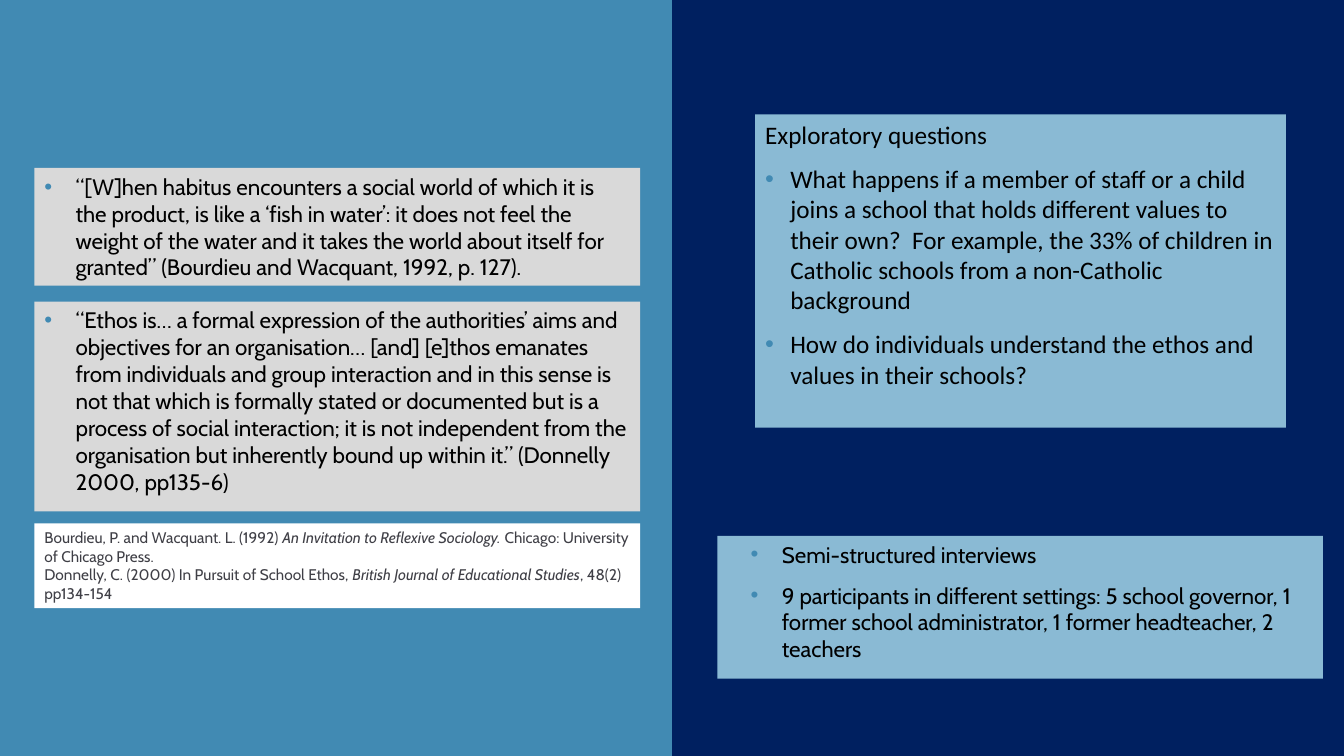
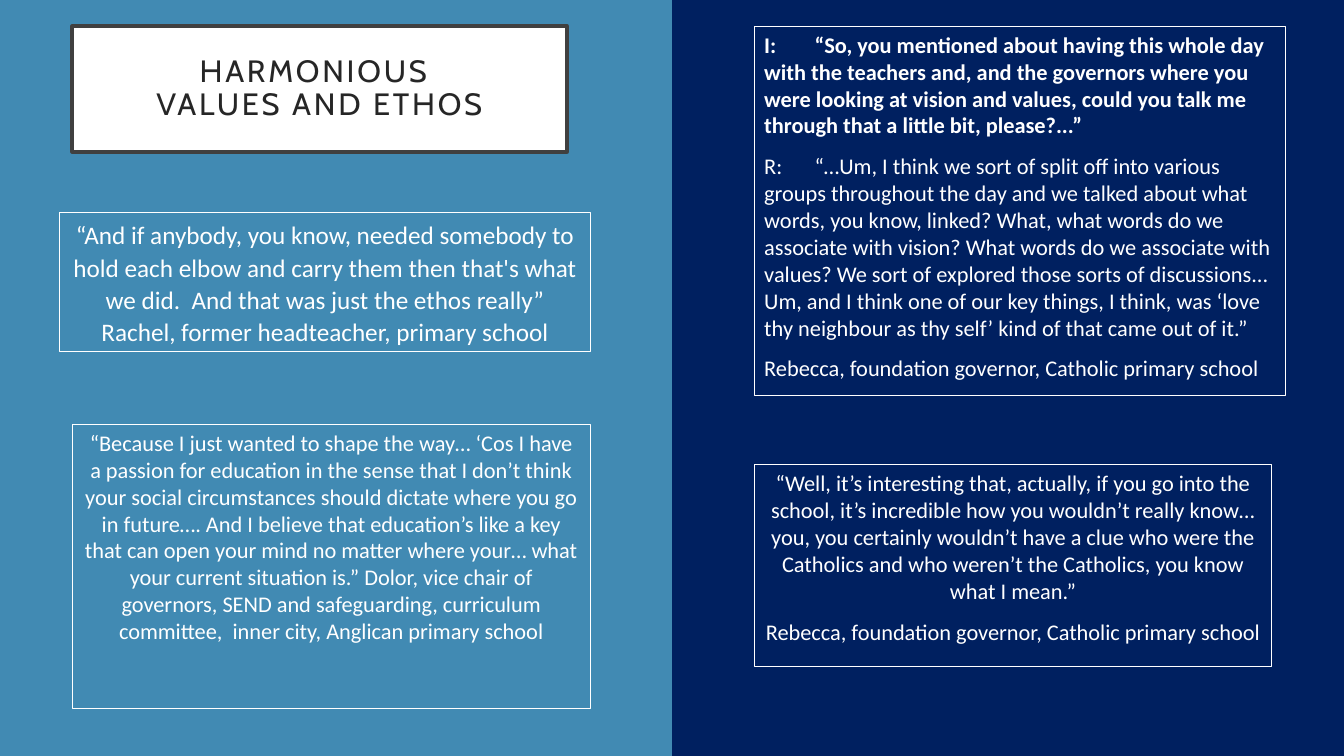
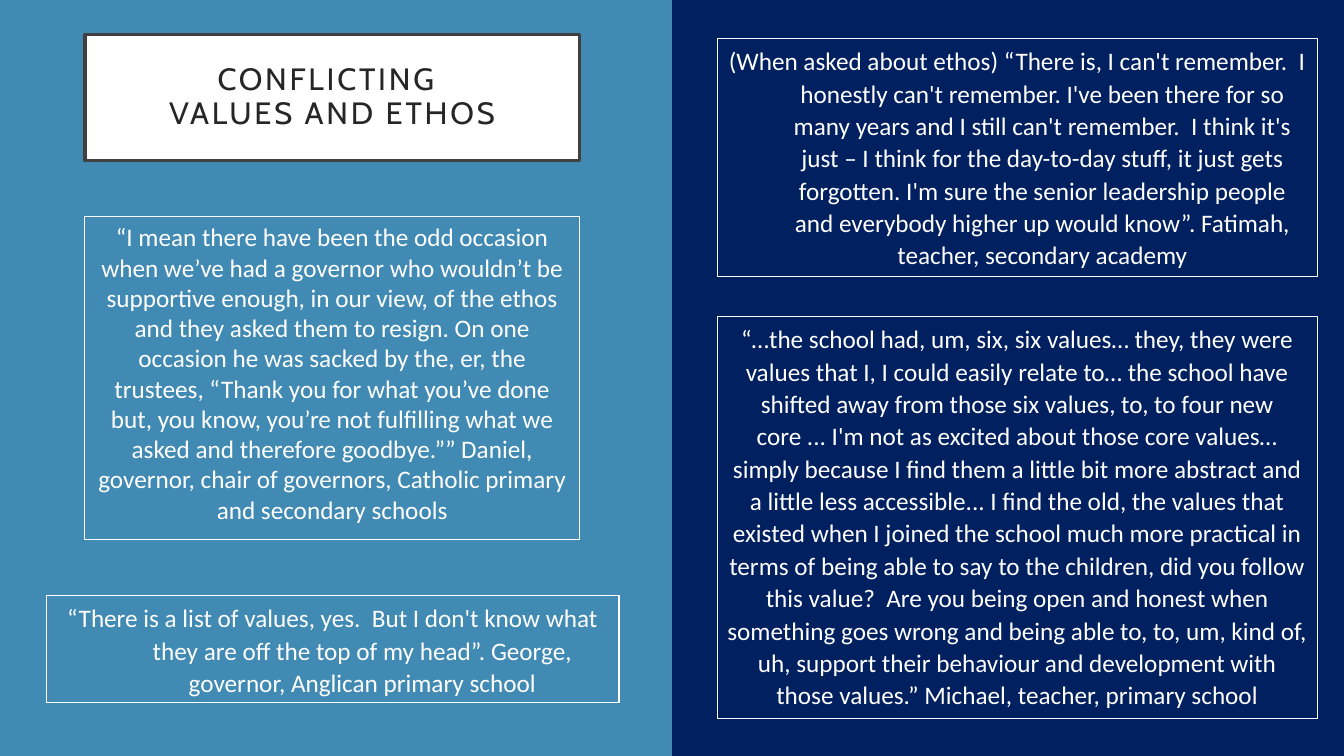
"""Build three slides on school values and ethos over a two-tone background."""

import dataclasses
import typing

import lxml.etree
import pptx
import pptx.dml.color
import pptx.enum.shapes
import pptx.enum.text
import pptx.oxml.ns
import pptx.util

COLUMNS, ROWS = 160, 90
CELL = pptx.util.Inches(1) // 12
TITLE_ONLY, BLANK = 5, 6
LEFT = pptx.enum.text.PP_ALIGN.LEFT
CENTER = pptx.enum.text.PP_ALIGN.CENTER


@dataclasses.dataclass(frozen=True)
class Theme:
    """Colours, fonts and type sizes of the deck."""

    navy: str = "002060"
    blue: str = "418AB3"
    pale_blue: str = "8ABAD4"
    gray: str = "D9D9D9"
    white: str = "FFFFFF"
    black: str = "000000"
    slate: str = "3F3F46"
    title_ink: str = "262626"
    title_line: str = "404040"
    heading_font: str = "Cabin"
    body_font: str = "Calibri"
    title_size: int = 22
    large: int = 18
    medium: int = 16
    small: int = 11


THEME = Theme()


class Area(typing.NamedTuple):
    """Left, top, width and height in grid cells."""

    left: float
    top: float
    width: float
    height: float


class Span(typing.NamedTuple):
    """A stretch of text with its emphasis."""

    text: str
    bold: bool = False
    italic: bool = False


class Para(typing.NamedTuple):
    """Spans of one paragraph and whether it carries a bullet."""

    spans: tuple[Span, ...]
    bullet: bool = False


@dataclasses.dataclass(frozen=True)
class Style:
    """Look of a panel and of the paragraphs in it."""

    size: int
    font: str = THEME.body_font
    ink: str = THEME.white
    fill: str | None = None
    line: str | None = THEME.white
    align: pptx.enum.text.PP_ALIGN = CENTER
    before: float = 10
    after: float = 0
    spacing: float = 1.0
    hang: float = 0
    inset: float = 0.1
    grow: bool = False


@dataclasses.dataclass(frozen=True)
class Panel:
    """A text panel on a slide."""

    area: Area
    style: Style
    paras: tuple[Para, ...]


@dataclasses.dataclass(frozen=True)
class Page:
    """Panels of a slide, with a title where there is one."""

    panels: tuple[Panel, ...]
    title: str = ""
    title_area: Area = Area(0, 0, 0, 0)


def plain(text: str, bullet: bool = False, bold: bool = False) -> Para:
    """Return a paragraph made of one span."""
    return Para((Span(text, bold),), bullet)


def rgb(value: str) -> pptx.dml.color.RGBColor:
    """Return the colour for a hexadecimal value."""
    return pptx.dml.color.RGBColor.from_string(value)


def place(shape, area: Area) -> None:
    """Move and size a shape on the grid."""
    shape.left, shape.top, shape.width, shape.height = (round(cells * CELL) for cells in area)


def paint(shape, fill: str | None, line: str | None, width: float = 0.75) -> None:
    """Set the fill and outline of a shape."""
    if fill:
        shape.fill.solid()
        shape.fill.fore_color.rgb = rgb(fill)
    else:
        shape.fill.background()
    if line:
        shape.line.color.rgb = rgb(line)
        shape.line.width = pptx.util.Pt(width)
    else:
        shape.line.fill.background()


def write(para, text: str, *, size: float, font: str, ink: str,
          bold: bool = False, italic: bool = False, tracking: float = 0) -> None:
    """Add formatted text to a paragraph, breaking lines at newlines."""
    for index, part in enumerate(text.split("\n")):
        if index:
            para.add_line_break()
        span = para.add_run()
        span.text = part
        span.font.size = pptx.util.Pt(size)
        span.font.name = font
        span.font.color.rgb = rgb(ink)
        span.font.bold = bold
        span.font.italic = italic
        if tracking:
            span.font._element.set("spc", str(round(tracking * 100)))


def indent(para, hang: float, bullet: bool) -> None:
    """Give a paragraph a hanging indent and, if asked, a bullet."""
    properties = para._p.get_or_add_pPr()
    properties.set("marL", str(pptx.util.Inches(hang)))
    properties.set("indent", str(pptx.util.Inches(-hang)))
    if bullet:
        name = pptx.oxml.ns.qn
        color = lxml.etree.SubElement(properties, name("a:buClr"))
        lxml.etree.SubElement(color, name("a:srgbClr"), val=THEME.blue)
        lxml.etree.SubElement(properties, name("a:buFont"), typeface="Arial")
        lxml.etree.SubElement(properties, name("a:buChar"), char="•")


def draw_panel(slide, panel: Panel) -> None:
    """Draw a text panel."""
    style = panel.style
    box = slide.shapes.add_textbox(0, 0, CELL, CELL)
    place(box, panel.area)
    paint(box, style.fill, style.line)
    frame = box.text_frame
    frame.word_wrap = True
    frame.margin_left = pptx.util.Inches(style.inset)
    sizing = pptx.enum.text.MSO_AUTO_SIZE
    frame.auto_size = sizing.SHAPE_TO_FIT_TEXT if style.grow else sizing.NONE
    for index, content in enumerate(panel.paras):
        para = frame.add_paragraph() if index else frame.paragraphs[0]
        para.alignment = style.align
        para.space_before = pptx.util.Pt(style.before)
        para.space_after = pptx.util.Pt(style.after)
        para.line_spacing = style.spacing
        if style.hang and (content.bullet or style.align == CENTER):
            indent(para, style.hang, content.bullet)
        for span in content.spans:
            write(para, span.text, size=style.size, font=style.font, ink=style.ink,
                  bold=span.bold, italic=span.italic)


def draw_title(slide, text: str, area: Area) -> None:
    """Format the title placeholder as a framed white plate."""
    title = slide.shapes.title
    place(title, area)
    paint(title, THEME.white, THEME.title_line, 2.5)
    frame = title.text_frame
    frame.word_wrap = True
    frame.auto_size = pptx.enum.text.MSO_AUTO_SIZE.NONE
    frame.vertical_anchor = pptx.enum.text.MSO_ANCHOR.MIDDLE
    margin = pptx.util.Inches(0.2)
    frame.margin_left = frame.margin_right = frame.margin_top = frame.margin_bottom = margin
    para = frame.paragraphs[0]
    para.alignment = CENTER
    para.line_spacing = 0.9
    write(para, text, size=THEME.title_size, font=THEME.heading_font,
          ink=THEME.title_ink, tracking=2)


def dress_master(deck, slide) -> None:
    """Put the navy background and the blue left half on the slide master."""
    master = deck.slide_master
    master.background.fill.solid()
    master.background.fill.fore_color.rgb = rgb(THEME.navy)
    band = slide.shapes.add_shape(pptx.enum.shapes.MSO_SHAPE.RECTANGLE, 0, 0, CELL, CELL)
    place(band, Area(0, 0, COLUMNS / 2, ROWS))
    paint(band, THEME.blue, None)
    band.shadow.inherit = False
    highest = max(shape.shape_id for shape in master.shapes)
    band.element.xpath("p:nvSpPr/p:cNvPr")[0].set("id", str(highest + 1))
    master.shapes.element.insert(2, band.element)


QUOTE = Style(THEME.medium, THEME.heading_font, THEME.black, THEME.gray, None, LEFT, hang=0.31)
REFERENCES = Style(THEME.small, THEME.heading_font, THEME.slate, THEME.white, None, LEFT,
                   before=0, grow=True)
QUESTIONS = Style(THEME.large, THEME.body_font, THEME.black, THEME.pale_blue, None, LEFT,
                  hang=0.25)
METHOD = dataclasses.replace(QUOTE, fill=THEME.pale_blue, inset=0.33)
VOICE = Style(THEME.medium)
DIALOGUE = dataclasses.replace(VOICE, align=LEFT)
LARGE_VOICE = Style(THEME.large)
LOOSE_VOICE = Style(THEME.large, before=0, after=8, spacing=1.07, grow=True)
REBECCA = plain("Rebecca, foundation governor, Catholic primary school")

PAGES = (
    Page((
        Panel(Area(4.1, 20, 72.1, 14), QUOTE, (
            plain("“[W]hen habitus encounters a social world of which it is the product, is "
                  "like a ‘fish in water’: it does not feel the weight of the water and it "
                  "takes the world about itself for granted” (Bourdieu and Wacquant, 1992, "
                  "p. 127).", bullet=True),)),
        Panel(Area(4.1, 35.9, 72.1, 25), QUOTE, (
            plain("“Ethos is… a formal expression of the authorities’ aims and objectives "
                  "for an organisation… [and] [e]thos emanates from individuals and group "
                  "interaction and in this sense is not that which is formally stated or "
                  "documented but is a process of social interaction; it is not independent "
                  "from the organisation but inherently bound up within it.” (Donnelly 2000, "
                  "pp135-6)", bullet=True),)),
        Panel(Area(4.1, 62.3, 72.1, 10.1), REFERENCES, (
            Para((Span("Bourdieu, P. and Wacquant. L. (1992) "),
                  Span("An Invitation to Reflexive Sociology. ", italic=True),
                  Span("Chicago: University of Chicago Press."))),
            Para((Span("Donnelly, C. (2000) In Pursuit of School Ethos, "),
                  Span("British Journal of Educational Studies", italic=True),
                  Span(", 48(2) pp134-154"))))),
        Panel(Area(89.9, 13.6, 63.2, 37.3), QUESTIONS, (
            plain("Exploratory questions"),
            plain("What happens if a member of staff or a child joins a school that holds "
                  "different values to their own?  For example, the 33% of children in "
                  "Catholic schools from a non-Catholic background", bullet=True),
            plain("How do individuals understand the ethos and values in their schools?",
                  bullet=True))),
        Panel(Area(85.4, 63.8, 72.1, 17), METHOD, (
            plain("Semi-structured interviews", bullet=True),
            plain("9 participants in different settings: 5 school governor, 1 former school "
                  "administrator, 1 former headteacher, 2 teachers", bullet=True))),
    )),
    Page((
        Panel(Area(89.8, 55.3, 61.6, 24.1), VOICE, (
            plain("“Well, it’s interesting that, actually, if you go into the school, it’s "
                  "incredible how you wouldn’t really know… you, you certainly wouldn’t have "
                  "a clue who were the Catholics and who weren’t the Catholics, you know what "
                  "I mean.”"),
            REBECCA)),
        Panel(Area(89.8, 3.1, 63.2, 44), DIALOGUE, (
            plain("I:\t“So, you mentioned about having this whole day with the teachers and, "
                  "and the governors where you were looking at vision and values, could you "
                  "talk me through that a little bit, please?...”", bold=True),
            plain("R:\t“…Um, I think we sort of split off into various groups throughout the "
                  "day and we talked about what words, you know, linked? What, what words do "
                  "we associate with vision? What words do we associate with values? We sort "
                  "of explored those sorts of discussions... Um, and I think one of our key "
                  "things, I think, was ‘love thy neighbour as thy self’ kind of that came "
                  "out of it.”"),
            REBECCA)),
        Panel(Area(8.6, 50.5, 61.7, 33.8), VOICE, (
            plain("“Because I just wanted to shape the way… ‘Cos I have a passion for "
                  "education in the sense that I don’t think your social circumstances should "
                  "dictate where you go in future…. And I believe that education’s like a key "
                  "that can open your mind no matter where your… what your current situation "
                  "is.” Dolor, vice chair of governors, SEND and safeguarding, curriculum "
                  "committee,  inner city, Anglican primary school"),)),
        Panel(Area(7.1, 25.3, 63.2, 16.6), LOOSE_VOICE, (
            plain("“And if anybody, you know, needed somebody to hold each elbow and carry "
                  "them then that's what we did.  And that was just the ethos really” Rachel, "
                  "former headteacher, primary school"),)),
    ), "HARMONIOUS \nVALUES AND ETHOS", Area(8.6, 3.1, 58.9, 15)),
    Page((
        Panel(Area(10.1, 25.8, 58.9, 38.4), LARGE_VOICE, (
            plain("“I mean there have been the odd occasion when we’ve had a governor who "
                  "wouldn’t be supportive enough, in our view, of the ethos and they asked "
                  "them to resign. On one occasion he was sacked by the, er, the trustees, "
                  "“Thank you for what you’ve done but, you know, you’re not fulfilling what "
                  "we asked and therefore goodbye.”” Daniel, governor, chair of governors, "
                  "Catholic primary and secondary schools"),)),
        Panel(Area(85.4, 4.6, 71.4, 28.3), dataclasses.replace(LOOSE_VOICE, hang=0.5), (
            plain("(When asked about ethos) “There is, I can't remember.  I honestly can't "
                  "remember. I've been there for so many years and I still can't remember.  "
                  "I think it's just – I think for the day-to-day stuff, it just gets "
                  "forgotten. I'm sure the senior leadership people and everybody higher up "
                  "would know”. Fatimah, teacher, secondary academy"),)),
        Panel(Area(5.5, 70.9, 68.2, 12.7), dataclasses.replace(LOOSE_VOICE, hang=0.59), (
            plain("“There is a list of values, yes.  But I don't know what they are off the "
                  "top of my head”. George, governor, Anglican primary school"),)),
        Panel(Area(85.4, 37.7, 71.4, 47.8), LOOSE_VOICE, (
            plain("“…the school had, um, six, six values… they, they were values that I, I "
                  "could easily relate to… the school have shifted away from those six "
                  "values, to, to four new core ... I'm not as excited about those core "
                  "values… simply because I find them a little bit more abstract and a little "
                  "less accessible... I find the old, the values that existed when I joined "
                  "the school much more practical in terms of being able to say to the "
                  "children, did you follow this value?  Are you being open and honest when "
                  "something goes wrong and being able to, to, um, kind of, uh, support their "
                  "behaviour and development with those values.” Michael, teacher, primary "
                  "school"),)),
    ), "CONFLICTING \nVALUES AND ETHOS", Area(10.1, 4.1, 58.9, 15)),
)


def main() -> None:
    """Build and save the deck."""
    deck = pptx.Presentation()
    deck.slide_width, deck.slide_height = COLUMNS * CELL, ROWS * CELL
    for page in PAGES:
        slide = deck.slides.add_slide(deck.slide_layouts[TITLE_ONLY if page.title else BLANK])
        if page is PAGES[0]:
            dress_master(deck, slide)
        if page.title:
            draw_title(slide, page.title, page.title_area)
        for panel in page.panels:
            draw_panel(slide, panel)
    deck.save("out.pptx")


if __name__ == "__main__":
    main()
